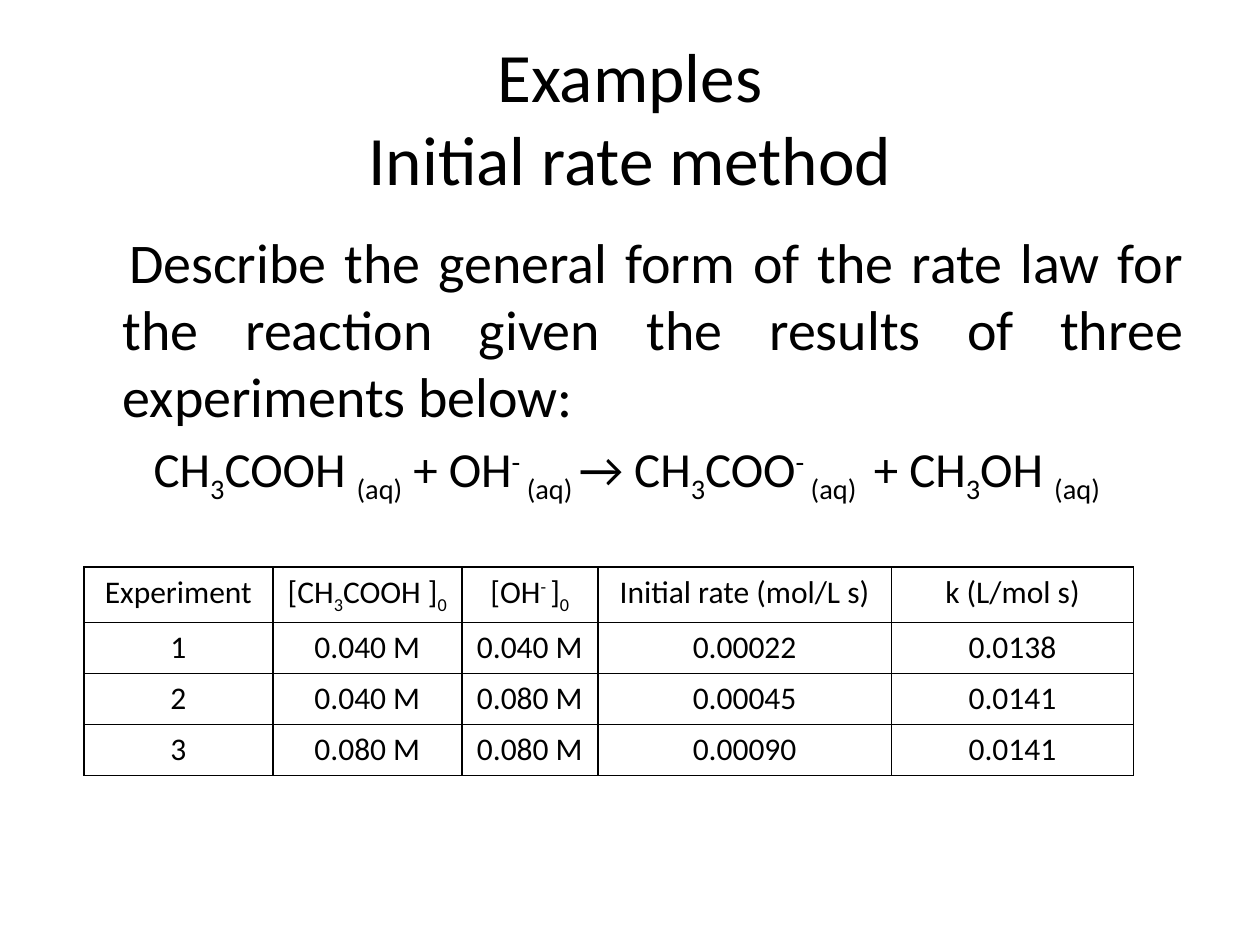
from typing import NamedTuple

from lxml import etree
from pptx import Presentation
from pptx.dml.color import RGBColor
from pptx.enum.text import MSO_AUTO_SIZE, MSO_ANCHOR, PP_ALIGN
from pptx.oxml.ns import qn
from pptx.util import Cm, Pt

BLACK = RGBColor(0x00, 0x00, 0x00)
CENTER, JUSTIFY = PP_ALIGN.CENTER, PP_ALIGN.JUSTIFY
MIDDLE, NO_AUTOFIT = MSO_ANCHOR.MIDDLE, MSO_AUTO_SIZE.NONE
FONT_NAME = "Calibri"
SUBSCRIPT, SUPERSCRIPT = -25000, 30000


class Piece(NamedTuple):
    text: str
    baseline: int = 0


class Box(NamedTuple):
    left: float
    top: float
    width: float
    height: float


def sub(text: str) -> Piece:
    return Piece(text, SUBSCRIPT)


def sup(text: str) -> Piece:
    return Piece(text, SUPERSCRIPT)


TITLE_BOX = Box(1.27, 0.76, 22.86, 3.18)
BODY_BOX = Box(1.27, 4.45, 22.86, 12.57)
TABLE_BOX = Box(1.69, 11.43, 21.16, 4.12)
COLUMN_WIDTHS = (3.81, 3.81, 2.74, 5.92, 4.88)
ROW_HEIGHT = 1.03

QUESTION = [Piece("Describe the general form of the rate law for the reaction "
                  "given the results of three experiments below:")]
REACTION = [
    Piece("CH"), sub("3"), Piece("COOH "), sub("(aq)"),
    Piece(" + OH"), sup("-"), sub(" (aq) "),
    Piece("→ CH"), sub("3"), Piece("COO"), sup("- "), sub("(aq) "),
    Piece(" + CH"), sub("3"), Piece("OH "), sub("(aq) "),
]
HEADER = [
    [Piece("Experiment")],
    [Piece("[CH"), sub("3"), Piece("COOH ]"), sub("0")],
    [Piece("[OH"), sup("- "), Piece("]"), sub("0")],
    [Piece("Initial rate (mol/L s)")],
    [Piece("k (L/mol s)")],
]
RESULTS = [
    ("1", "0.040 M", "0.040 M", "0.00022", "0.0138"),
    ("2", "0.040 M", "0.080 M", "0.00045", "0.0141"),
    ("3", "0.080 M", "0.080 M", "0.00090", "0.0141"),
]


def place(shape, box: Box) -> None:
    for side, length in box._asdict().items():
        setattr(shape, side, Cm(length))


def format_font(font, size: float) -> None:
    for attribute, value in {"name": FONT_NAME, "size": Pt(size)}.items():
        setattr(font, attribute, value)
    font.color.rgb = BLACK


def write(paragraph, pieces: list[Piece], size: float, alignment=CENTER) -> None:
    paragraph.alignment = alignment
    for piece in pieces:
        run = paragraph.add_run()
        run.text = piece.text
        format_font(run.font, size)
        if piece.baseline:
            run.font._element.set("baseline", str(piece.baseline))


def indent_without_bullet(paragraph, margin: float, first_line: float) -> None:
    properties = paragraph._p.get_or_add_pPr()
    properties.set("marL", str(Cm(margin)))
    properties.set("indent", str(Cm(first_line)))
    etree.SubElement(properties, qn("a:buNone"))


def outline(cell) -> None:
    """Draw a thin black line on all four sides of a cell."""
    properties = cell._tc.get_or_add_tcPr()
    for position, side in enumerate(("a:lnL", "a:lnR", "a:lnT", "a:lnB")):
        line = etree.Element(qn(side), w=str(Pt(1)))
        fill = etree.SubElement(line, qn("a:solidFill"))
        etree.SubElement(fill, qn("a:srgbClr"), val=str(BLACK))
        properties.insert(position, line)


def add_title(slide) -> None:
    title = slide.shapes.title
    place(title, TITLE_BOX)
    frame = title.text_frame
    frame.auto_size = NO_AUTOFIT
    frame.vertical_anchor = MIDDLE
    frame.text = "Examples\vInitial rate method"
    heading = frame.paragraphs[0]
    heading.alignment = CENTER
    for run in heading.runs:
        format_font(run.font, 39.6)


def add_body(slide) -> None:
    body = slide.placeholders[1]
    place(body, BODY_BOX)
    frame = body.text_frame
    frame.auto_size = NO_AUTOFIT
    question = frame.paragraphs[0]
    write(question, QUESTION, 32, JUSTIFY)
    indent_without_bullet(question, 0.95, 0.13)
    reaction = frame.add_paragraph()
    write(reaction, REACTION, 28)
    indent_without_bullet(reaction, 0.95, -0.95)


def add_results_table(slide) -> None:
    rows = [HEADER] + [[[Piece(value)] for value in result] for result in RESULTS]
    table = slide.shapes.add_table(
        len(rows), len(COLUMN_WIDTHS), *(Cm(length) for length in TABLE_BOX)).table
    table.first_row = table.horz_banding = False
    for column, width in zip(table.columns, COLUMN_WIDTHS):
        column.width = Cm(width)
    for row, contents in zip(table.rows, rows):
        row.height = Cm(ROW_HEIGHT)
        for cell, pieces in zip(row.cells, contents):
            cell.fill.background()
            outline(cell)
            write(cell.text_frame.paragraphs[0], pieces, 18)


def main() -> None:
    presentation = Presentation()
    presentation.slide_width, presentation.slide_height = Cm(25.4), Cm(19.05)
    slide = presentation.slides.add_slide(presentation.slide_layouts[1])
    add_title(slide)
    add_body(slide)
    add_results_table(slide)
    presentation.save("out.pptx")


if __name__ == "__main__":
    main()
